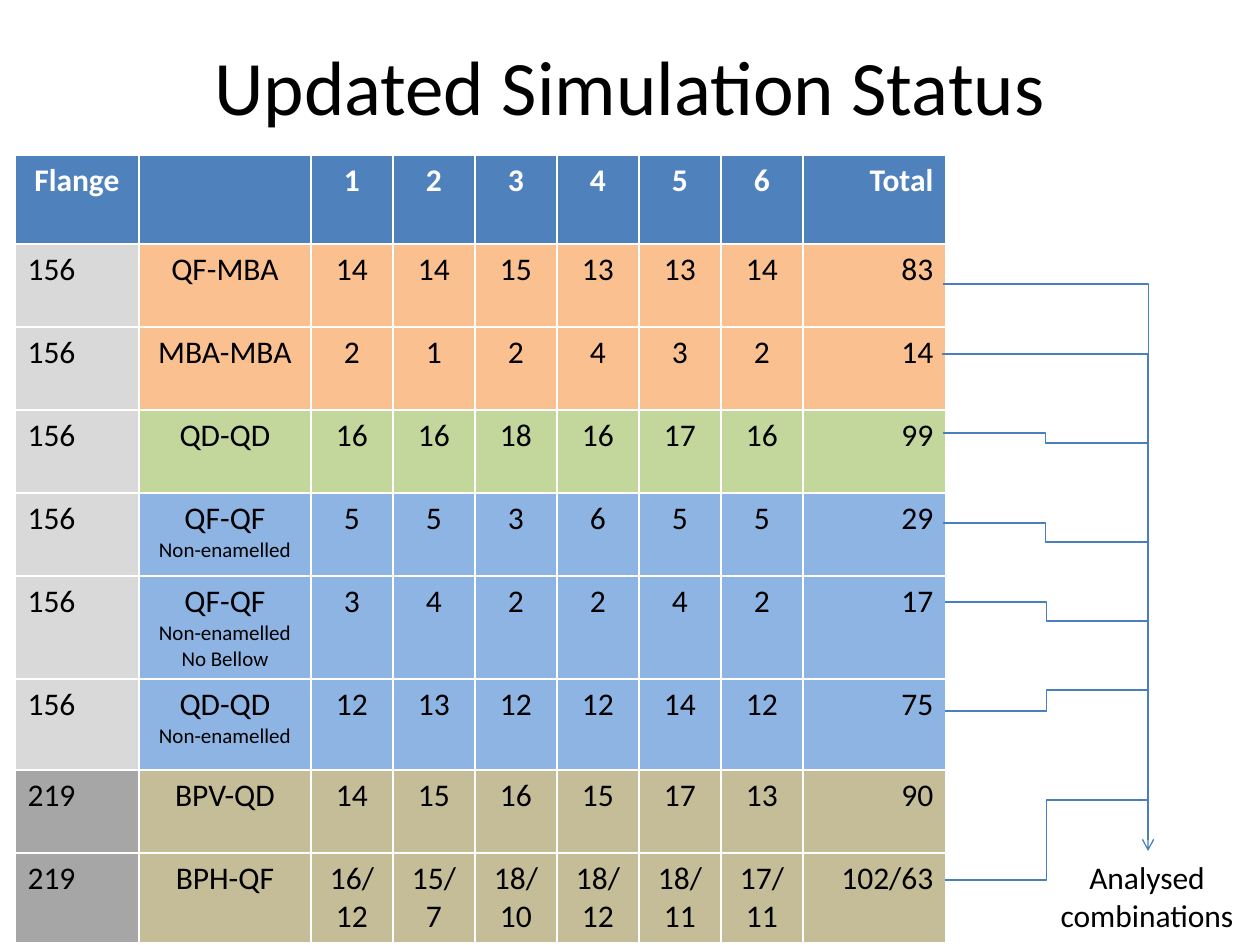
"""Build the simulation status slide: a results table and its analysed total."""
from lxml import etree
from pptx import Presentation
from pptx import util as u
from pptx.dml.color import RGBColor
from pptx.enum import shapes, text
from pptx.oxml.ns import qn

EMU_PER_PX = 914400 / 126
FONT = "Calibri"
COLORS = {
    "white": "FFFFFF", "black": "000000", "header": "4F81BD", "line": "4B7EBC",
    "156": "D9D9D9", "219": "A6A6A6", "orange": "FAC090", "green": "C3D69B",
    "blue": "8EB4E3", "tan": "C4BD97",
}
COL_WIDTHS = [124, 172] + [82] * 6 + [143]
ROW_HEIGHTS = [89, 83, 83, 83, 83, 103, 91, 83, 89]
HEADER = ["Flange", "", "1", "2", "3", "4", "5", "6", "Total"]
ROWS = [
    ("orange", "156", "QF-MBA", "14 14 15 13 13 14 83"),
    ("orange", "156", "MBA-MBA", "2 1 2 4 3 2 14"),
    ("green", "156", "QD-QD", "16 16 18 16 17 16 99"),
    ("blue", "156", "QF-QF\nNon-enamelled", "5 5 3 6 5 5 29"),
    ("blue", "156", "QF-QF\nNon-enamelled\nNo Bellow", "3 4 2 2 4 2 17"),
    ("blue", "156", "QD-QD\nNon-enamelled", "12 13 12 12 14 12 75"),
    ("tan", "219", "BPV-QD", "14 15 16 15 17 13 90"),
    ("tan", "219", "BPH-QF", "16/12 15/7 18/10 18/12 18/11 17/11 102/63"),
]
TRUNK_X = 1148
BRANCHES = [
    ((943, 284), 355, 1.002), ((943, 433), 443, 0.5), ((943, 523), 542, 0.5),
    ((945, 602), 621, 0.5), ((945, 711), 690, 0.5), ((945, 880), 800, 0.5),
]


def px(n):
    """Turn pixels into EMU."""
    return u.Emu(round(n * EMU_PER_PX))


def rgb(name):
    """Look up a named colour."""
    return RGBColor.from_string(COLORS[name])


def place(sp, left, top, width, height):
    """Move and size a shape."""
    sp.left, sp.top, sp.width, sp.height = map(px, (left, top, width, height))


def add_run(p, words, size, color="black", bold=False, align=text.PP_ALIGN.CENTER):
    """Add one formatted run to an aligned paragraph."""
    p.alignment = align
    r = p.add_run()
    r.text = words
    r.font.name, r.font.size, r.font.bold = FONT, u.Pt(size), bold
    r.font.color.rgb = rgb(color)


def add_title(s, words):
    """Fill the title placeholder."""
    sp = s.shapes.title
    place(sp, 63, 6, 1134, 158)
    sp.text_frame.vertical_anchor = text.MSO_ANCHOR.MIDDLE
    add_run(sp.text_frame.paragraphs[0], words, 44)


def fill_cell(cell, words, fill, align, color="black", bold=False):
    """Colour a cell and write its main line and smaller notes."""
    cell.fill.solid()
    cell.fill.fore_color.rgb = rgb(fill)
    tf = cell.text_frame
    for i, line in enumerate(words.split("\n") if words else []):
        p = tf.add_paragraph() if i else tf.paragraphs[0]
        add_run(p, line, 12 if i else 18, color, bold, align)


def add_status_table(s):
    """Add the table of simulations per flange and combination."""
    frame = s.shapes.add_table(len(ROWS) + 1, len(HEADER), px(15), px(155),
                               px(sum(COL_WIDTHS)), px(sum(ROW_HEIGHTS)))
    table = frame.table
    table.horz_banding = False
    for col, width in zip(table.columns, COL_WIDTHS):
        col.width = px(width)
    for row, height in zip(table.rows, ROW_HEIGHTS):
        row.height = px(height)
    left, center, right = (text.PP_ALIGN.LEFT, text.PP_ALIGN.CENTER,
                           text.PP_ALIGN.RIGHT)
    for c, words in enumerate(HEADER):
        align = right if words == "Total" else center
        fill_cell(table.cell(0, c), words, "header", align, "white", True)
    aligns = [left] + [center] * 7 + [right]
    for r, (fill, flange, combination, counts) in enumerate(ROWS, 1):
        values = [flange, combination] + counts.split()
        for c, (words, align) in enumerate(zip(values, aligns)):
            fill_cell(table.cell(r, c), words, fill if c else flange, align)


def add_elbow(s, start, end, bend):
    """Add a bent connector whose corner lies at a share of its width."""
    sp = s.shapes.add_connector(shapes.MSO_CONNECTOR.ELBOW,
                                *map(px, (*start, *end)))
    sp.line.color.rgb = rgb("line")
    sp.line.width = u.Pt(0.75)
    props = sp._element.spPr
    etree.SubElement(props, qn("a:effectLst"))
    guides = props.find(qn("a:prstGeom")).find(qn("a:avLst"))
    etree.SubElement(guides, qn("a:gd"), name="adj1",
                     fmla=f"val {round(bend * 100000)}")
    return sp


def add_trunk(s, start, end):
    """Add the arrow that runs across and then down, as a turned elbow."""
    mid_x, mid_y = (start[0] + end[0]) / 2, (start[1] + end[1]) / 2
    half_w, half_h = (end[1] - start[1]) / 2, (end[0] - start[0]) / 2
    sp = add_elbow(s, (mid_x + half_w, mid_y - half_h),
                   (mid_x - half_w, mid_y + half_h), -0.002)
    sp._element.spPr.find(qn("a:xfrm")).set("rot", str(270 * 60000))
    line = sp._element.spPr.find(qn("a:ln"))
    etree.SubElement(line, qn("a:tailEnd"), type="arrow")


def add_label(s, words):
    """Add the text under the arrow."""
    tf = s.shapes.add_textbox(*map(px, (1043, 852, 208, 89))).text_frame
    tf.word_wrap = True
    add_run(tf.paragraphs[0], words, 18)


def main():
    """Build and save the slide."""
    prs = Presentation()
    prs.slide_width, prs.slide_height = px(1260), px(945)
    s = prs.slides.add_slide(prs.slide_layouts[5])
    add_title(s, "Updated Simulation Status")
    add_status_table(s)
    add_label(s, "Analysed combinations")
    add_trunk(s, (943, 355), (TRUNK_X, 851))
    for start, end_y, bend in BRANCHES:
        add_elbow(s, start, (TRUNK_X, end_y), bend)
    prs.save("out.pptx")


if __name__ == "__main__":
    main()
